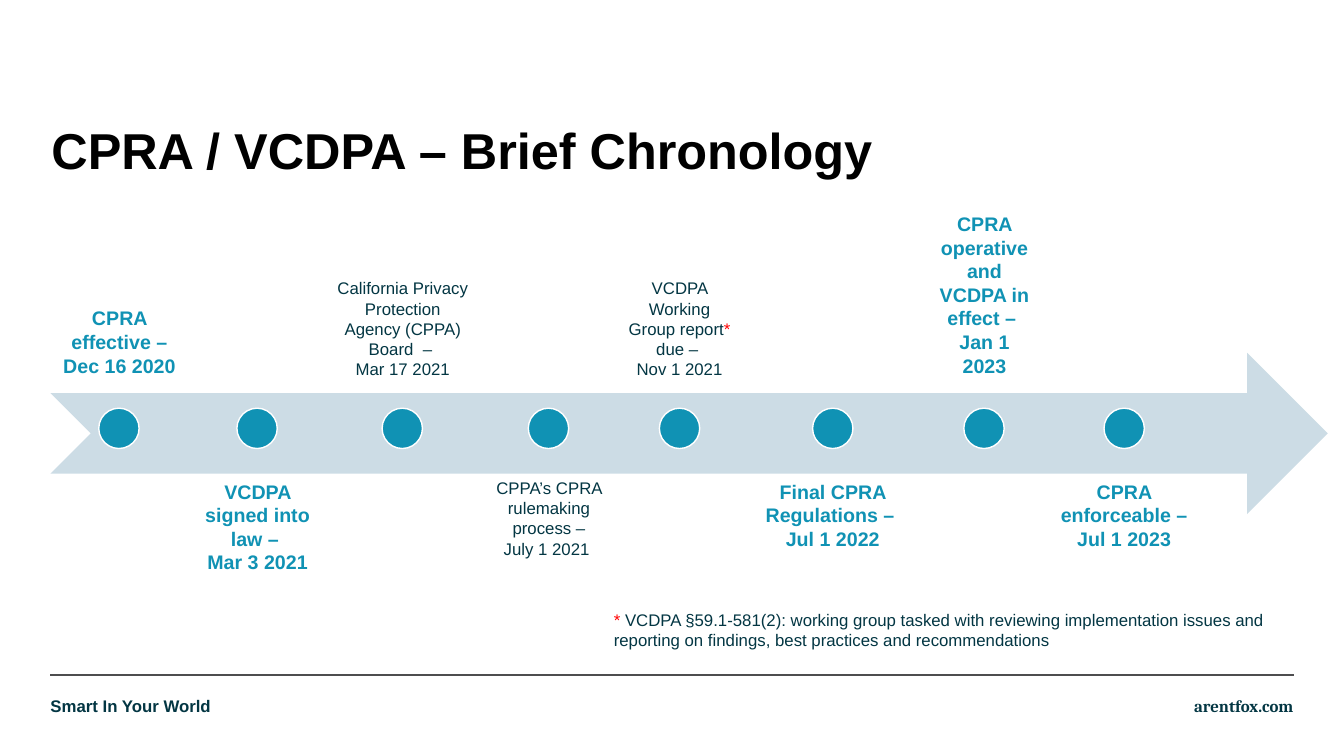
"""Build a one-slide timeline of the CPRA and VCDPA milestones."""
from lxml.etree import SubElement
from pptx import Presentation
from pptx.dml.color import RGBColor
from pptx.enum.shapes import MSO_CONNECTOR as Connector, MSO_SHAPE as Preset
from pptx.enum.text import MSO_ANCHOR as Anchor, MSO_AUTO_SIZE as AutoSize, PP_ALIGN as Align
from pptx.oxml.ns import qn
from pptx.util import Pt

EMU_PER_PX = 9144
COLORS = {
    "black": "000000",
    "white": "FFFFFF",
    "band": "CCDCE5",
    "accent": "1092B4",
    "ink": "033643",
    "mark": "FF0000",
    "rule": "4D4D4F",
}
FORMATS = {
    "title": {"size": Pt(36), "bold": True, "name": "Arial", "color": "black"},
    "milestone": {"size": Pt(14), "bold": True, "name": "Arial", "color": "accent"},
    "step": {"size": Pt(12), "bold": False, "name": "Arial", "color": "ink"},
    "tagline": {"size": Pt(12), "bold": True, "name": "Arial", "color": "ink"},
    "site": {"size": Pt(12), "bold": True, "name": "Cambria", "color": "ink"},
}
INSETS = {"milestone": 11, "step": 9}
MILESTONES = [
    (137, "milestone", ["CPRA effective – Dec 16 2020"]),
    (127, "milestone", ["VCDPA signed into law – ", "Mar 3 2021"]),
    (151, "step", ["California Privacy Protection Agency (CPPA) Board  – ", "Mar 17 2021"]),
    (129, "step", ["CPPA’s CPRA rulemaking process –", "July 1 2021 "]),
    (120, "step", ["VCDPA Working Group report* due – ", "Nov 1 2021"]),
    (174, "milestone", ["Final CPRA Regulations – ", "Jul 1 2022"]),
    (117, "milestone", ["CPRA operative and VCDPA in effect – ", "Jan 1 2023"]),
    (150, "milestone", ["CPRA enforceable – Jul 1 2023"]),
]
FOOTNOTE = ("* VCDPA §59.1-581(2): working group tasked with reviewing implementation "
            "issues and reporting on findings, best practices and recommendations")
TIMELINE_LEFT, LABEL_GAP, LABEL_HEIGHT = 50, 5, 160
LABEL_TOPS = (225, 465)
DOT_TOP, DOT_SIZE = 405, 40


def px(*lengths):
    return [length * EMU_PER_PX for length in lengths]


def color(name):
    return RGBColor.from_string(COLORS[name])


class SlideBuilder:
    """Draw styled elements on one slide."""

    def __init__(self, presentation):
        self.slide = presentation.slides.add_slide(presentation.slide_layouts[6])

    def add_run(self, paragraph, text, style):
        run = paragraph.add_run()
        run.text = text
        for key, value in style.items():
            if key == "color":
                run.font.color.rgb = color(value)
            else:
                setattr(run.font, key, value)

    def text(self, box, paragraphs, style, insets=(0, 0, 0, 0), align=Align.LEFT,
             anchor=Anchor.TOP, spacing=1.0, grow=False):
        frame = self.slide.shapes.add_textbox(*px(*box)).text_frame
        left, top, right, bottom = px(*insets)
        settings = {
            "word_wrap": True,
            "auto_size": AutoSize.SHAPE_TO_FIT_TEXT if grow else AutoSize.NONE,
            "vertical_anchor": anchor,
            "margin_left": left,
            "margin_top": top,
            "margin_right": right,
            "margin_bottom": bottom,
        }
        for key, value in settings.items():
            setattr(frame, key, value)
        for index, content in enumerate(paragraphs):
            paragraph = frame.add_paragraph() if index else frame.paragraphs[0]
            paragraph.alignment = align
            paragraph.line_spacing = spacing
            before, star, after = content.partition("*")
            for part in filter(None, (before, star, after)):
                part_style = {**FORMATS[style], "color": "mark"} if part == "*" else FORMATS[style]
                self.add_run(paragraph, part, part_style)

    def shape(self, preset, box, fill, line=None):
        shape = self.slide.shapes.add_shape(preset, *px(*box))
        shape.shadow.inherit = False
        shape.fill.solid()
        shape.fill.fore_color.rgb = color(fill)
        if line:
            shape.line.color.rgb = color(line)
            shape.line.width = Pt(1)
        else:
            shape.line.fill.background()

    def rule(self, ends, line):
        connector = self.slide.shapes.add_connector(Connector.STRAIGHT, *px(*ends))
        connector.line.color.rgb = color(line)
        connector.line.width = Pt(1.25)
        SubElement(connector._element.spPr, qn("a:effectLst"))

    def timeline(self):
        self.shape(Preset.NOTCHED_RIGHT_ARROW, (TIMELINE_LEFT, 350, 1267, 160), "band")
        left = TIMELINE_LEFT
        for index, (width, style, paragraphs) in enumerate(MILESTONES):
            below = index % 2
            self.text((left, LABEL_TOPS[below], width, LABEL_HEIGHT), paragraphs, style,
                      insets=(INSETS[style],) * 4, align=Align.CENTER,
                      anchor=Anchor.TOP if below else Anchor.BOTTOM)
            dot_left = left + (width - DOT_SIZE) // 2
            self.shape(Preset.OVAL, (dot_left, DOT_TOP, DOT_SIZE, DOT_SIZE), "accent", "white")
            left += width + LABEL_GAP


def main():
    presentation = Presentation()
    presentation.slide_width, presentation.slide_height = px(1333, 750)
    builder = SlideBuilder(presentation)
    builder.rule((50, 670, 1283, 670), "rule")
    builder.text((0, 690, 342, 20), ["Smart In Your World"], "tagline",
                 insets=(50, 0, 0, 0), grow=True)
    builder.text((1017, 690, 316, 20), ["arentfox.com"], "site",
                 insets=(0, 0, 50, 0), align=Align.RIGHT, grow=True)
    builder.text((51, 125, 1233, 100), ["CPRA / VCDPA – Brief Chronology"], "title", spacing=0.9)
    builder.timeline()
    builder.text((599, 600, 684, 50), [FOOTNOTE], "step", insets=(10, 5, 10, 5), grow=True)
    presentation.save("out.pptx")


if __name__ == "__main__":
    main()
